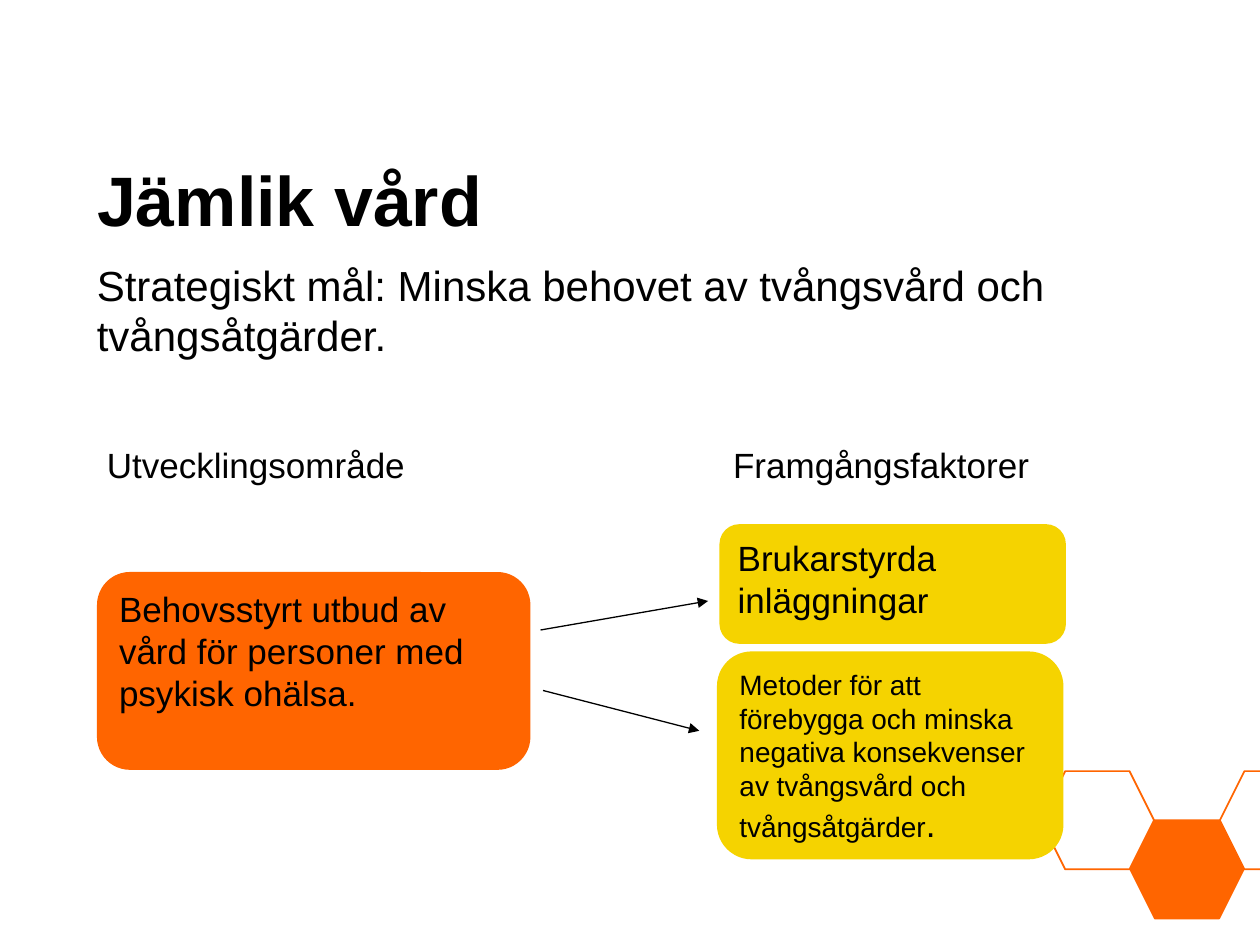
from dataclasses import dataclass

from lxml.etree import SubElement
from pptx import Presentation
from pptx.dml.color import RGBColor as RGB
from pptx.enum.shapes import MSO_CONNECTOR as CONN, MSO_SHAPE as SHAPE
from pptx.enum.text import MSO_ANCHOR as ANCHOR, MSO_AUTO_SIZE as FIT, PP_ALIGN as ALIGN
from pptx.oxml.ns import qn
from pptx.util import Inches, Pt


@dataclass(frozen=True)
class Theme:
    font: str = "Arial"
    ink: RGB = RGB(0, 0, 0)
    paper: RGB = RGB(255, 255, 255)
    orange: RGB = RGB(0xFF, 0x65, 0x00)
    yellow: RGB = RGB(0xF5, 0xD3, 0x00)
    title: int = 40
    lead: int = 24
    body: int = 20
    small: int = 16
    arrow: float = 0.75
    outline: float = 1


T = Theme()
COLS, ROWS = 100, 75
WIDTH, HEIGHT = Inches(10), Inches(7.5)


def x(col):
    return round(WIDTH * col / COLS)


def y(row):
    return round(HEIGHT * row / ROWS)


def place(box):
    left, top, width, height = box
    return x(left), y(top), x(width), y(height)


def set_all(obj, values):
    for name, value in values.items():
        setattr(obj, name, value)


def write(sp, runs, anchor=ANCHOR.TOP, bold=False):
    tf = sp.text_frame
    set_all(tf, {"word_wrap": True, "auto_size": FIT.NONE, "vertical_anchor": anchor})
    p = tf.paragraphs[0]
    p.alignment = ALIGN.LEFT
    for text, size in runs:
        r = p.add_run()
        r.text = text
        set_all(r.font, {"name": T.font, "size": Pt(size), "bold": bold})
        r.font.color.rgb = T.ink


def add_shape(s, kind, box, fill, line=None):
    sp = s.shapes.add_shape(kind, *place(box))
    sp.shadow.inherit = False
    sp.fill.solid()
    sp.fill.fore_color.rgb = fill
    if line is None:
        sp.line.fill.background()
    else:
        sp.line.color.rgb = line
        sp.line.width = Pt(T.outline)
    return sp


def add_text(s, box, text, size):
    write(s.shapes.add_textbox(*place(box)), [(text, size)])


def add_card(s, box, fill, runs):
    write(add_shape(s, SHAPE.ROUNDED_RECTANGLE, box, fill), runs)


def add_arrow(s, start, end):
    c = s.shapes.add_connector(
        CONN.STRAIGHT, x(start[0]), y(start[1]), x(end[0]), y(end[1]))
    c.line.color.rgb = T.ink
    c.line.width = Pt(T.arrow)
    SubElement(c.line._get_or_add_ln(), qn("a:tailEnd"), type="triangle")
    SubElement(c._element.spPr, qn("a:effectLst"))


def honeycomb(s, box):
    left, top, width, height = box
    step = width * 0.79
    for i, fill in enumerate((T.paper, T.orange, T.paper)):
        cell = (left + i * step, top + i % 2 * height / 2, width, height)
        sp = add_shape(s, SHAPE.HEXAGON, cell, fill, T.orange)
        sp.adjustments[0] = 0.25


def heading(s, box):
    left, top, width, height = box
    title = s.shapes.title
    set_all(title, dict(zip(("left", "top", "width", "height"),
                            place((left, top, width, 8.5)))))
    write(title, [("Jämlik vård", T.title)], ANCHOR.MIDDLE, True)
    add_text(s, (left, top + 8.6, width, height - 8.6),
             "Strategiskt mål: Minska behovet av tvångsvård och tvångsåtgärder.",
             T.lead)


def development_area(s, box):
    left, top, width, height = box
    add_text(s, (left, top, 28.3, 4.4), "Utvecklingsområde", T.body)
    add_card(s, (left + 0.2, top + 10.7, width - 0.2, height - 10.7), T.orange,
             [("Behovsstyrt utbud av vård för personer med psykisk ohälsa.", T.body)])


def success_factors(s, box):
    left, top, width, height = box
    card = width - 0.2
    add_text(s, (left + 0.3, top, 26.7, 4.4), "Framgångsfaktorer", T.body)
    add_card(s, (left, top + 17, card, height - 17), T.yellow,
             [("Metoder för att förebygga och minska negativa konsekvenser "
               "av tvångsvård och tvångsåtgärder", T.small), (".", T.body)])
    add_card(s, (left + 0.2, top + 6.9, card, 9.5), T.yellow,
             [("Brukarstyrda inläggningar", T.body)])


def arrows(s, box):
    left, top, width, height = box
    add_arrow(s, (left, top + 2.3), (left + width, top))
    add_arrow(s, (left + 0.2, top + 7.1), (left + width - 0.7, top + height))


def main():
    prs = Presentation()
    set_all(prs, {"slide_width": WIDTH, "slide_height": HEIGHT})
    s = prs.slides.add_slide(prs.slide_layouts[5])
    honeycomb(s, (82.6, 61.2, 9, 7.8))
    heading(s, (6.7, 11.5, 90, 17.7))
    development_area(s, (7.5, 34.7, 34.6, 26.4))
    success_factors(s, (56.9, 34.7, 27.7, 33.5))
    arrows(s, (42.9, 47.7, 13.3, 10.3))
    prs.save("out.pptx")


if __name__ == "__main__":
    main()
